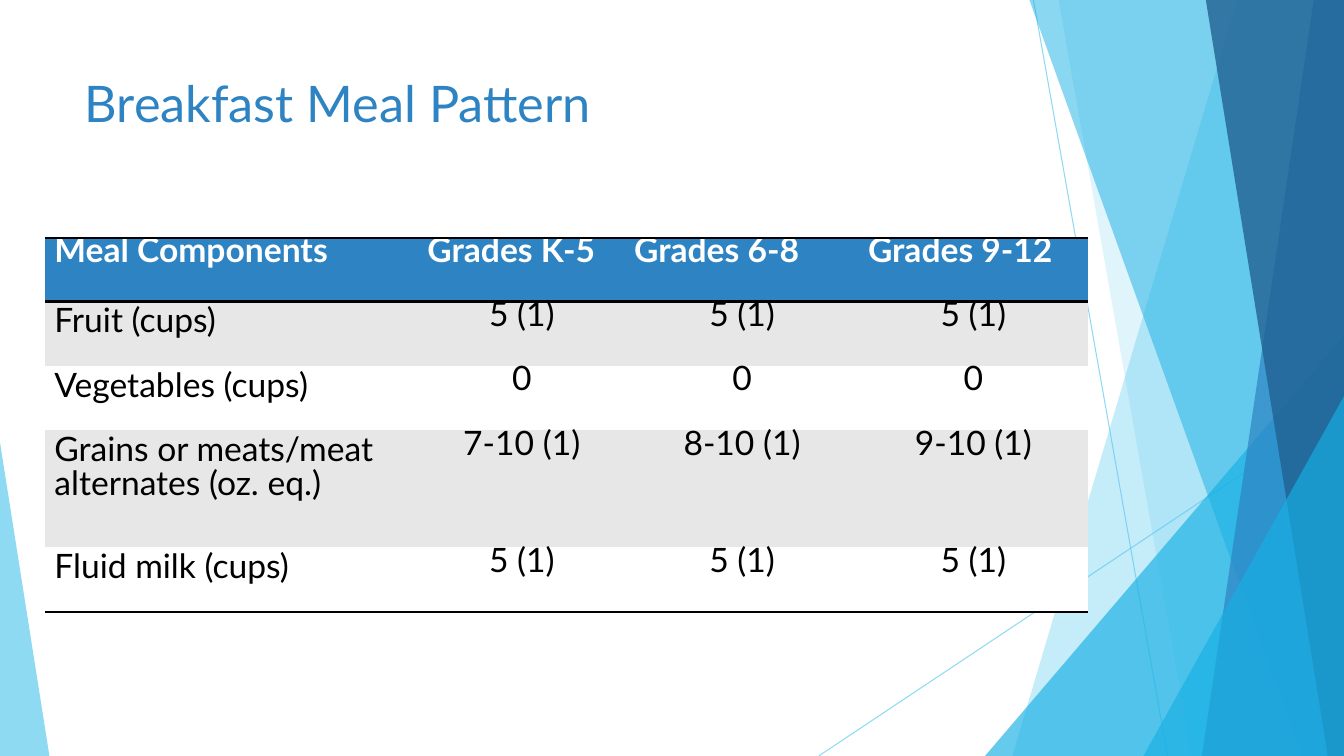
from lxml import etree
from pptx import Presentation
from pptx import util as u
from pptx.dml.color import RGBColor
from pptx.enum import shapes, text
from pptx.oxml.ns import qn

HUES = {"sky": "5FCBEF", "cyan": "17B0E4", "blue": "2E83C3", "navy": "226292",
        "gray": "E7E7E7", "white": "FFFFFF", "black": "000000"}
WIDE, HIGH = 13.33, 7.5
PLAIN = "{2D5ABB26-0587-4C30-8999-92F81FD0307C}"


class Deck:
    """Draws styled elements on the current slide."""

    def __init__(self):
        self.prs = Presentation()
        self.prs.slide_width = u.Inches(WIDE)
        self.prs.slide_height = u.Inches(HIGH)
        self.slide = self.prs.slides.add_slide(self.prs.slide_layouts[5])
        self.items = self.slide.shapes
        self.font = "Lato"

    def hue(self, name):
        return RGBColor.from_string(HUES[name])

    def fade(self, part, alpha):
        color = next(part.iter(qn("a:solidFill")))[0]
        etree.SubElement(color, qn("a:alpha"), val=str(alpha * 1000))

    def paint(self, shape, hue, alpha):
        shape.shadow.inherit = False
        shape.fill.solid()
        shape.fill.fore_color.rgb = self.hue(hue)
        self.fade(shape._element.spPr, alpha)
        shape.line.fill.background()

    def line(self, x1, y1, x2, y2):
        line = self.items.add_connector(
            shapes.MSO_CONNECTOR.STRAIGHT, *map(u.Inches, (x1, y1, x2, y2)))
        line.line.color.rgb = self.hue("sky")
        line.line.width = u.Pt(0.75)
        props = line._element.spPr
        self.fade(props, 70)
        etree.SubElement(props, qn("a:effectLst"))

    def facet(self, top, base, hue, alpha):
        path = self.items.build_freeform(u.Inches(top), 0)
        path.add_line_segments([(u.Inches(x), u.Inches(y)) for x, y in
                                ((WIDE, 0), (WIDE, HIGH), (base, HIGH))])
        self.paint(path.convert_to_shape(), hue, alpha)

    def wedge(self, left, top, width, peak, hue, alpha):
        shape = self.items.add_shape(
            shapes.MSO_SHAPE.ISOSCELES_TRIANGLE,
            *map(u.Inches, (left, top, width, HIGH - top)))
        shape.adjustments[0] = peak
        self.paint(shape, hue, alpha)

    def style(self, para, size, hue, bold=False):
        for run in para.runs:
            run.font.name = self.font
            run.font.size = u.Pt(size)
            run.font.bold = bold
            run.font.color.rgb = self.hue(hue)

    def title(self, words):
        box = self.items.title
        box.left, box.top, box.width, box.height = map(
            u.Inches, (0.74, 0.67, 9.4, 1.44))
        frame = box.text_frame
        frame.text = words
        frame.word_wrap = True
        frame.auto_size = text.MSO_AUTO_SIZE.NONE
        frame.vertical_anchor = text.MSO_ANCHOR.TOP
        frame.paragraphs[0].alignment = text.PP_ALIGN.LEFT
        self.style(frame.paragraphs[0], 36, "blue")
        self.items._spTree.append(box._element)

    def rule(self, cell, side):
        edge = etree.SubElement(cell._tc.get_or_add_tcPr(),
                                qn("a:" + side), w=str(u.Pt(2)))
        fill = etree.SubElement(edge, qn("a:solidFill"))
        etree.SubElement(fill, qn("a:srgbClr"), val=HUES["black"])

    def cell(self, cell, words, row, col, last):
        head = row == 0
        for side, shown in (("lnT", head), ("lnB", head or row == last)):
            if shown:
                self.rule(cell, side)
        cell.fill.solid()
        cell.fill.fore_color.rgb = self.hue(
            "blue" if head else "gray" if row % 2 else "white")
        cell.margin_left = cell.margin_right = u.Inches(0.09)
        cell.margin_top = cell.margin_bottom = u.Inches(0.05)
        cell.text_frame.text = words
        para = cell.text_frame.paragraphs[0]
        label = col == 0 and not head
        para.line_spacing = u.Pt(23.9 if label else 19.5)
        para.alignment = (text.PP_ALIGN.LEFT if head or label
                          else text.PP_ALIGN.CENTER)
        self.style(para, 24, "white" if head else "black", head)

    def table(self, left, top, cols, rows, data):
        grid = self.items.add_table(
            len(rows), len(cols),
            *map(u.Inches, (left, top, sum(cols), sum(rows)))).table
        grid._tbl.tblPr.find(qn("a:tableStyleId")).text = PLAIN
        for col, width in zip(grid.columns, cols):
            col.width = u.Inches(width)
        for r, (height, line) in enumerate(zip(rows, data)):
            grid.rows[r].height = u.Inches(height)
            for c, words in enumerate(line):
                self.cell(grid.cell(r, c), words, r, c, len(rows) - 1)


def main():
    deck = Deck()
    deck.line(10.25, 0, 11.58, HIGH)
    deck.line(WIDE, 4.03, 8.12, HIGH)
    deck.facet(12.27, 10.04, "sky", 36)
    deck.facet(10.5, 11.82, "sky", 20)
    deck.wedge(9.77, 3.33, 3.56, 1, "cyan", 66)
    deck.facet(10.21, 12.91, "cyan", 50)
    deck.facet(13.03, 11.92, "blue", 70)
    deck.facet(11.96, 13.17, "navy", 80)
    deck.wedge(11.34, 3.93, 1.99, 1, "cyan", 66)
    deck.wedge(0, 4.39, 0.49, 0, "sky", 70)
    deck.title("Breakfast Meal Pattern")
    deck.table(0.45, 2.36, (3.7, 2.05, 2.32, 2.27),
               (0.63, 0.64, 0.64, 1.16, 0.64), (
        ("Meal Components", "Grades K-5", "Grades 6-8", "Grades 9-12"),
        ("Fruit (cups)", "5 (1)", "5 (1)", "5 (1)"),
        ("Vegetables (cups)", "0", "0", "0"),
        ("Grains or meats/meat alternates (oz. eq.)",
         "7-10 (1)", "8-10 (1)", "9-10 (1)"),
        ("Fluid milk (cups)", "5 (1)", "5 (1)", "5 (1)")))
    deck.prs.save("out.pptx")


if __name__ == "__main__":
    main()
